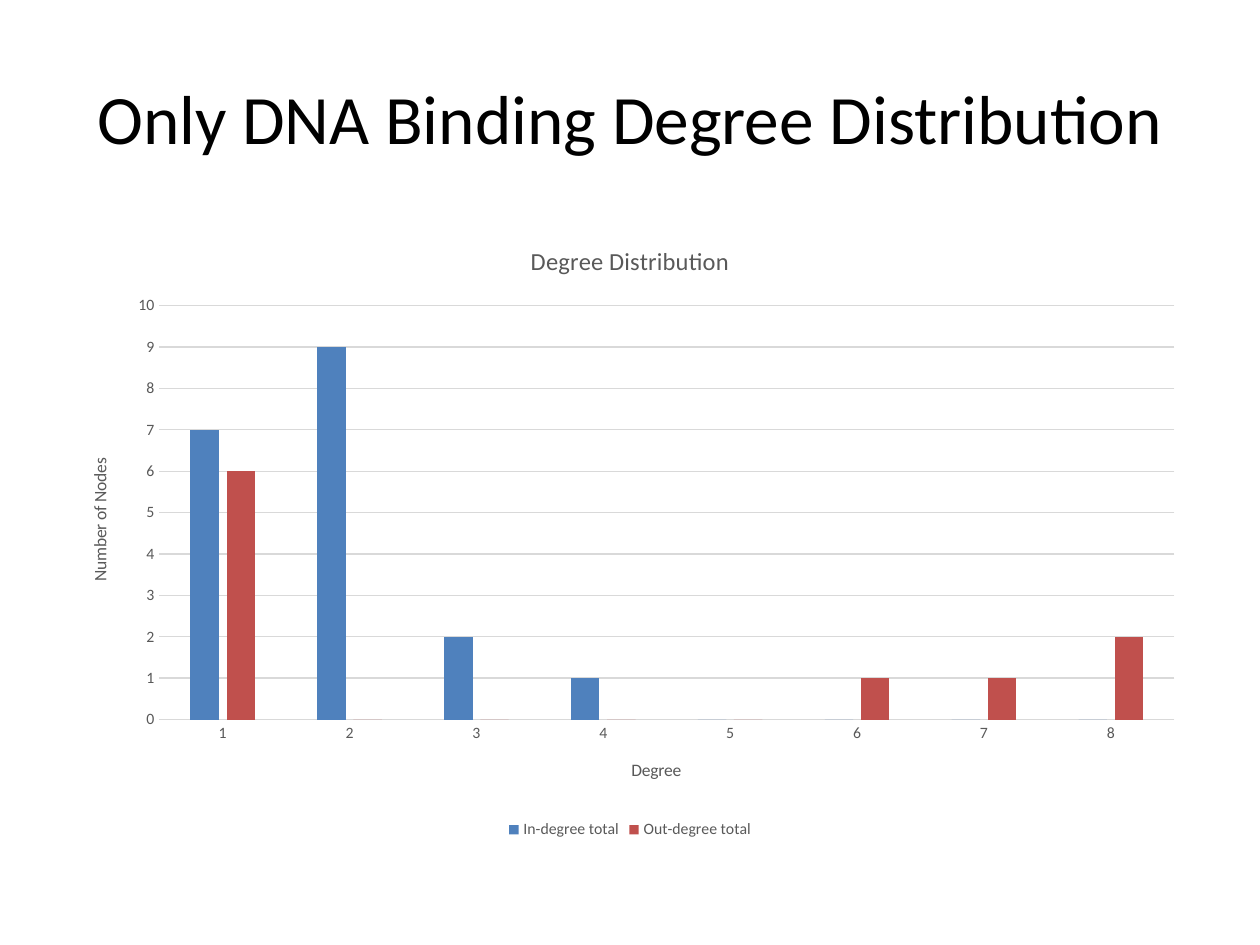
from pptx import Presentation
from pptx.chart.data import CategoryChartData
from pptx.dml.color import RGBColor
from pptx.enum.chart import XL_CHART_TYPE, XL_LEGEND_POSITION, XL_TICK_MARK
from pptx.enum.text import MSO_ANCHOR, MSO_AUTO_SIZE, PP_ALIGN
from pptx.util import Emu, Pt

PX = 914400 / 126
FONT = "Calibri"
BLACK = RGBColor(0x00, 0x00, 0x00)
GRAY = RGBColor(0x59, 0x59, 0x59)
LIGHT_GRAY = RGBColor(0xD9, 0xD9, 0xD9)
BLUE = RGBColor(0x4F, 0x81, 0xBD)
RED = RGBColor(0xC0, 0x50, 0x4D)
COLUMNS = XL_CHART_TYPE.COLUMN_CLUSTERED
BOTTOM = XL_LEGEND_POSITION.BOTTOM
NO_TICK = XL_TICK_MARK.NONE
MIDDLE = MSO_ANCHOR.MIDDLE
CENTER = PP_ALIGN.CENTER
NO_FIT = MSO_AUTO_SIZE.NONE

DEGREES = [str(degree) for degree in range(1, 9)]
SERIES = [
    ("In-degree total", (7, 9, 2, 1, 0, 0, 0, 0), BLUE),
    ("Out-degree total", (6, 0, 0, 0, 0, 1, 1, 2), RED),
]


def px(length):
    return Emu(round(length * PX))


def style_font(font, size, color):
    font.name = FONT
    font.size = Pt(size)
    font.bold = False
    font.color.rgb = color


def style_line(line):
    line.color.rgb = LIGHT_GRAY
    line.width = Pt(0.75)


def set_title(page, text):
    title = page.shapes.title
    title.left, title.top, title.width, title.height = map(px, (63, 38, 1134, 157))
    frame = title.text_frame
    frame.text = text
    frame.word_wrap = True
    frame.auto_size = NO_FIT
    frame.vertical_anchor = MIDDLE
    para = frame.paragraphs[0]
    para.alignment = CENTER
    style_font(para.runs[0].font, 39.6, BLACK)


def set_chart_text(owner, text, size):
    frame = owner.text_frame
    frame.text = text
    style_font(frame.paragraphs[0].runs[0].font, size, GRAY)


def style_axis(axis, title):
    axis.major_tick_mark = NO_TICK
    axis.minor_tick_mark = NO_TICK
    style_font(axis.tick_labels.font, 9, GRAY)
    set_chart_text(axis.axis_title, title, 10)


def add_degree_chart(page):
    data = CategoryChartData()
    data.categories = DEGREES
    for name, values, _ in SERIES:
        data.add_series(name, values)
    place = map(px, (63, 220, 1134, 624))
    chart = page.shapes.add_chart(COLUMNS, *place, data).chart
    style_font(chart.font, 10, BLACK)
    set_chart_text(chart.chart_title, "Degree Distribution", 14)
    chart.chart_title.include_in_layout = False

    style_axis(chart.category_axis, "Degree")
    style_line(chart.category_axis.format.line)
    count_axis = chart.value_axis
    style_axis(count_axis, "Number of Nodes")
    count_axis.format.line.fill.background()
    count_axis.minimum_scale = 0
    count_axis.maximum_scale = 10
    count_axis.major_unit = 1
    style_line(count_axis.major_gridlines.format.line)

    chart.has_legend = True
    chart.legend.position = BOTTOM
    chart.legend.include_in_layout = False
    style_font(chart.legend.font, 9, GRAY)

    plot = chart.plots[0]
    plot.gap_width = 219
    plot.overlap = -27
    plot.vary_by_categories = False
    for series, (_, _, color) in zip(plot.series, SERIES):
        series.format.fill.solid()
        series.format.fill.fore_color.rgb = color
        series.invert_if_negative = False


def main():
    deck = Presentation()
    deck.slide_width, deck.slide_height = px(1260), px(945)
    page = deck.slides.add_slide(deck.slide_layouts[5])
    set_title(page, "Only DNA Binding Degree Distribution")
    add_degree_chart(page)
    deck.save("out.pptx")


if __name__ == "__main__":
    main()
